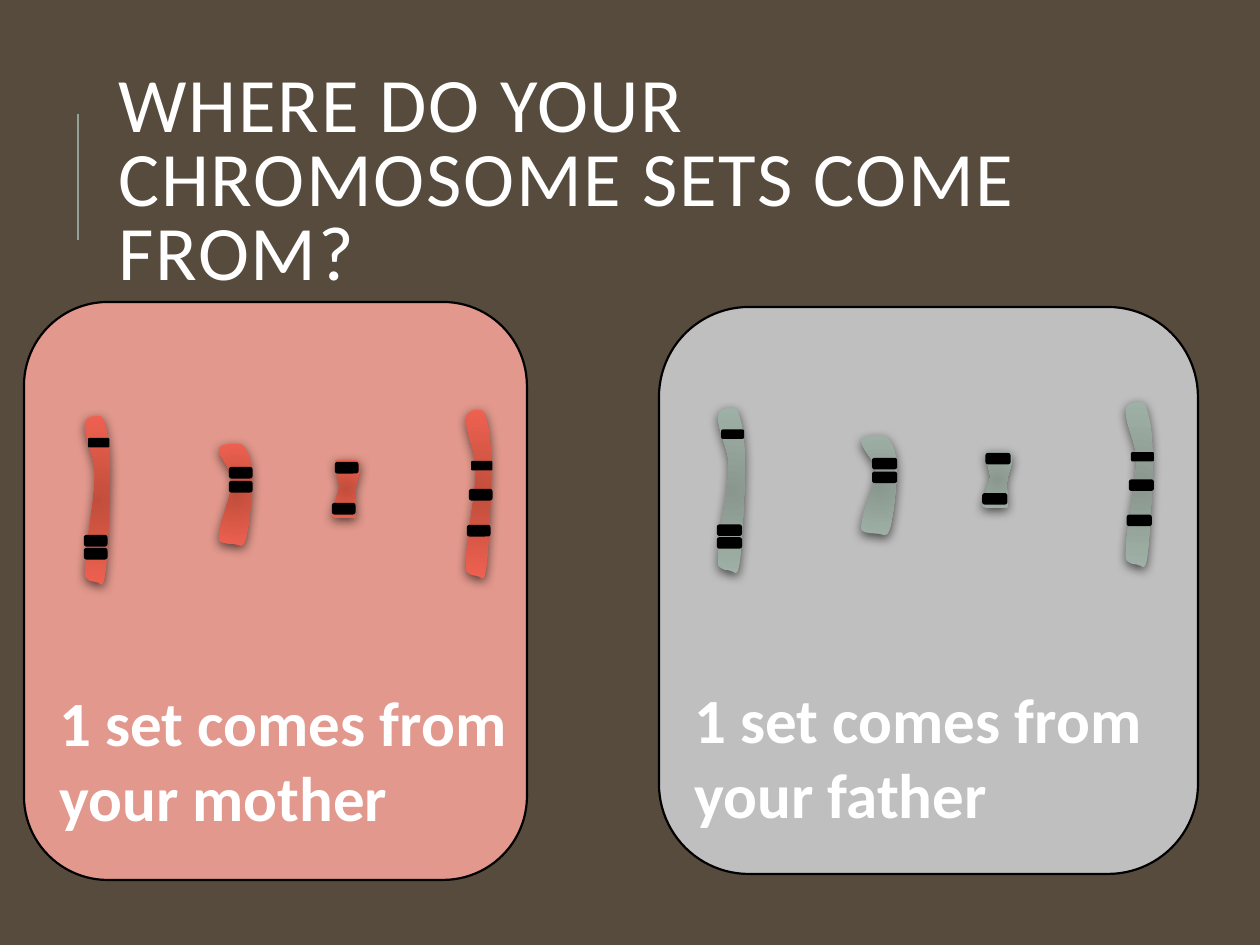
"""Build a slide on the two parental sets of chromosomes."""
from lxml.etree import SubElement
from pptx import Presentation
from pptx.dml.color import RGBColor
from pptx.enum.shapes import MSO_CONNECTOR as LINK, MSO_SHAPE as SHAPE
from pptx.enum.text import MSO_ANCHOR as ANCHOR
from pptx.oxml import parse_xml
from pptx.oxml.ns import nsdecls, qn
from pptx.util import Emu, Pt

PX = 914400 / 126
LONG = [[(0, 5)], [(0, 2), (20, 0), (40, 0)], [(40, 0)],
        [(65, 0), (70, -1), (80, 5)], [(90, 10), (100, 19), (100, 34)],
        [(100, 49), (90, 83), (80, 94)], [(70, 104), (65, 98), (40, 98)],
        [(40, 98)], [(20, 98), (0, 96), (0, 94)],
        [(0, 74), (40, 54), (40, 34)], [(40, 25), (0, 14), (0, 5)]]
SHORT = [[(27, 46)], [(27, 41), (5, 0), (14, 0)], [(82, 0)],
         [(91, 0), (100, 2), (100, 7)], [(100, 35), (82, 35), (82, 63)],
         [(82, 67), (91, 100), (82, 100)], [(14, 100)],
         [(5, 100), (0, 98), (0, 93)], [(27, 46)]]
BODIES = [(LONG, 0, 0, 25, 169, [(0, 133), (3, 22), (0, 120)]),
          (LONG, 134, 28, 33, 102, [(145, 52), (145, 66)]),
          (LONG, 381, -6, 25, 169, [(383, 110), (386, 45), (385, 74)]),
          (SHORT, 247, 44, 28, 58, [(248, 88), (251, 47)])]
BARE = [(3, 22), (386, 45)]
SETS = [("1 set comes from your mother", (24, 302, 503, 578), "E2988C",
         (85, 416, 1, 1), ("C14E3B", "EF6151"), (47, 677, 504, 165)),
        ("1 set comes from your father", (659, 307, 539, 567), "BFBFBF",
         (718, 408, 1.07, 0.98), ("89978F", "9FB1A6"), (682, 674, 554, 165))]
STOP = '<a:gs pos="{}"><a:srgbClr val="{}"/></a:gs>'
GRAD = ('<a:gradFill {} rotWithShape="1"><a:gsLst>{}</a:gsLst><a:path path="circle">'
        '<a:fillToRect l="100000" t="100000" r="100000" b="100000"/></a:path></a:gradFill>')
SHADE = ('<a:effectLst {}><a:outerShdw blurRad="76200" dist="25400" dir="5400000" '
         'rotWithShape="0"><a:srgbClr val="000000"><a:alpha val="60000"/></a:srgbClr>'
         '</a:outerShdw></a:effectLst>')

deck = Presentation()
deck.slide_width, deck.slide_height = [Emu(round(n * PX)) for n in (1260, 945)]
slide = deck.slides.add_slide(deck.slide_layouts[6])


def paint(fill, tone):
    fill.solid()
    fill.fore_color.rgb = RGBColor.from_string(tone)


def write(text, box, size, bold=False, gap=None, space=0, anchor=ANCHOR.TOP):
    frame = slide.shapes.add_textbox(*[Emu(round(n * PX)) for n in box]).text_frame
    frame.word_wrap, frame.vertical_anchor = True, anchor
    para = frame.paragraphs[0]
    para.line_spacing = gap
    run = para.add_run()
    run.text = text
    font = run.font
    font.name, font.size, font.bold = "Calibri", Pt(size), bold
    paint(font.fill, "FFFFFF")
    run._r.get_or_add_rPr().set("spc", str(space))


paint(slide.background.fill, "564B3C")
rule = slide.shapes.add_connector(
    LINK.STRAIGHT, *[Emu(round(n * PX)) for n in (78, 240, 78, 114)])
paint(rule.line.fill, "93A299")
rule.line.width = Pt(1.5)
SubElement(rule._element.spPr, qn("a:effectLst"))

for label, panel, tone, (left, top, sx, sy), tones, spot in SETS:
    group = slide.shapes.add_group_shape().shapes
    items = [(None, panel, tone, True)]
    for outline, x, y, wide, high, bands in BODIES:
        items.append((outline, (left + x * sx, top + y * sy, wide * sx, high * sy),
                      None, False))
        items += [(None, (left + u * sx, top + v * sy, 21.5 * sx, 9.5 * sy), "000000",
                   (u, v) not in BARE) for u, v in bands]
    for outline, box, hue, edge in items:
        x, y, wide, high = [Emu(round(n * PX)) for n in box]
        if outline:
            pen = group.build_freeform(x, y)
            pen.add_line_segments([(x + wide, y), (x + wide, y + high), (x, y + high)])
            part = pen.convert_to_shape()
            props = part._element.spPr
            track = next(props.iter(qn("a:path")))
            track.clear()
            track.set("w", "100")
            track.set("h", "100")
            for num, dots in enumerate(outline):
                kind = "cubicBezTo" if len(dots) == 3 else "lnTo" if num else "moveTo"
                step = SubElement(track, qn("a:" + kind))
                for u, v in dots:
                    SubElement(step, qn("a:pt"), x=str(u), y=str(v))
            SubElement(track, qn("a:close"))
            part.line.fill.background()
            stops = "".join(STOP.format(n * 100000, c) for n, c in enumerate(tones))
            props.find(qn("a:ln")).addprevious(
                parse_xml(GRAD.format(nsdecls("a"), stops)))
            props.append(parse_xml(SHADE.format(nsdecls("a"))))
            continue
        block = group.add_shape(SHAPE.ROUNDED_RECTANGLE, x, y, wide, high)
        block.shadow.inherit = False
        paint(block.fill, hue)
        if edge:
            paint(block.line.fill, "000000")
            block.line.width = Pt(1.25)
        else:
            block.line.fill.background()

write("WHERE DO YOUR CHROMOSOME SETS COME FROM?", (106, 81, 1004, 207), 44,
      gap=0.8, space=100, anchor=ANCHOR.MIDDLE)
for label, *rest, spot in SETS:
    write(label, spot, 36, bold=True)
deck.save("out.pptx")
